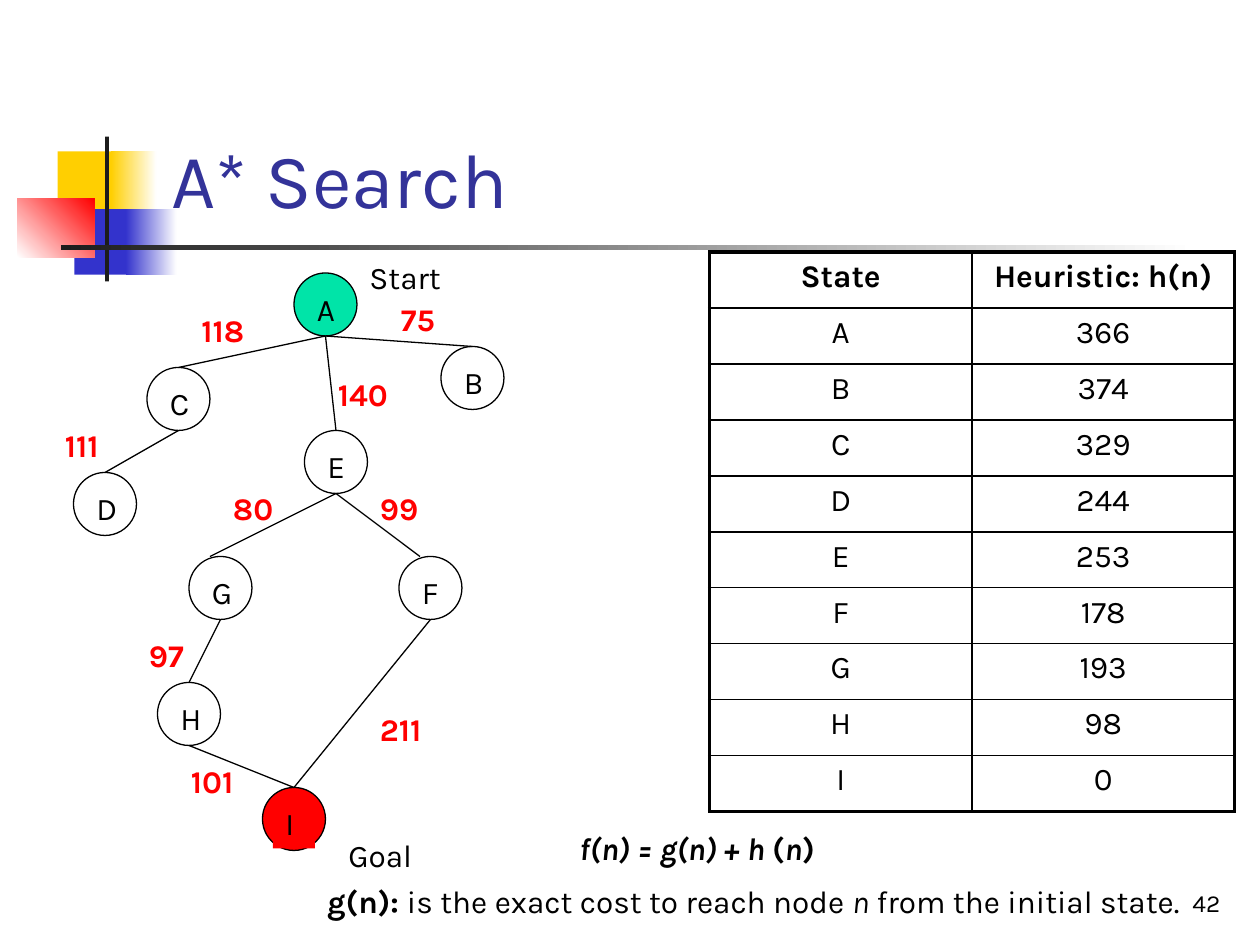
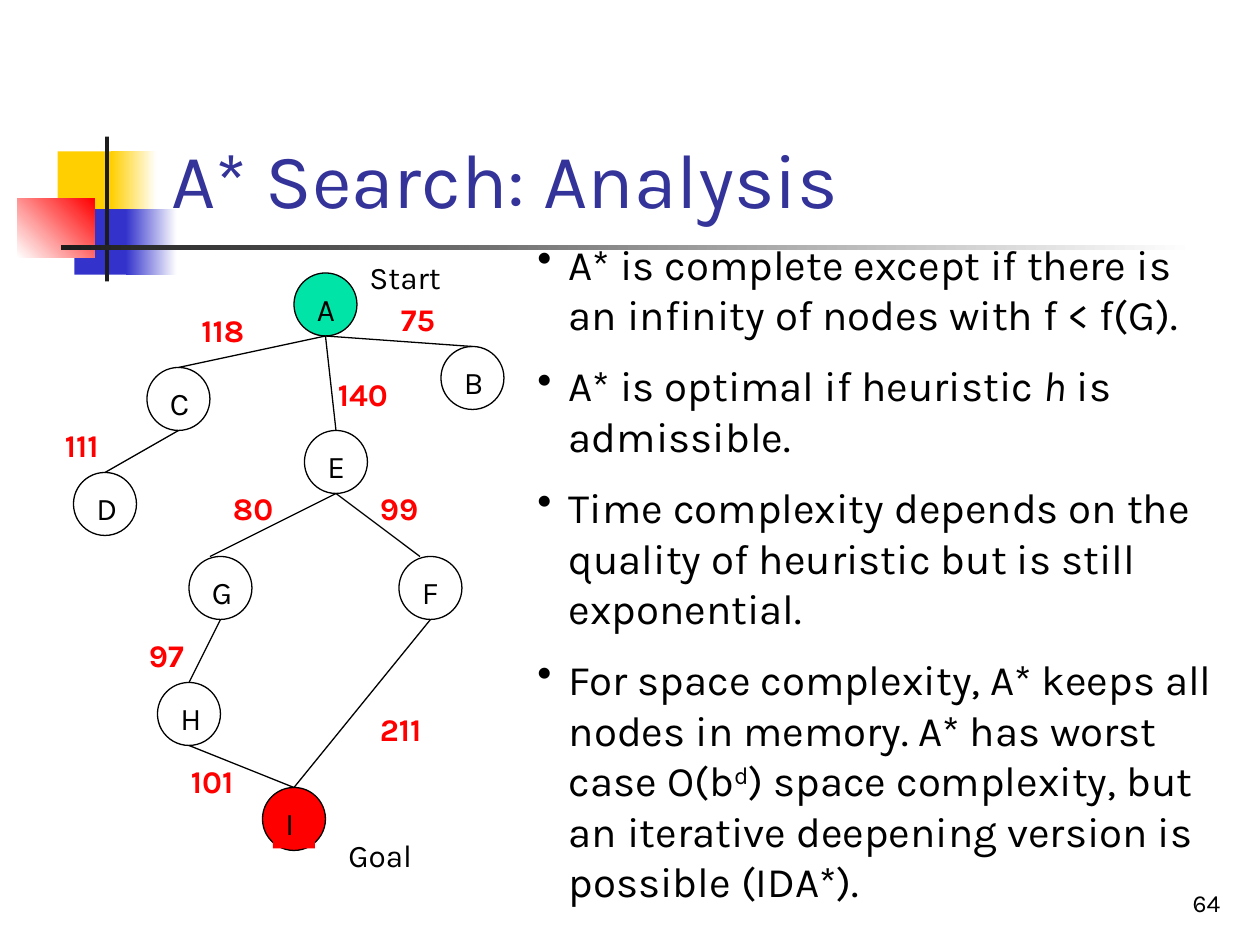
import pptx
import pptx.util
import pptx.dml.color
import pptx.enum.shapes
import pptx.enum.text
import pptx.oxml.ns
from lxml import etree

Pt = pptx.util.Pt
RGB = pptx.dml.color.RGBColor
SHAPE = pptx.enum.shapes.MSO_SHAPE
ALIGN = pptx.enum.text.PP_ALIGN
ANCHOR = pptx.enum.text.MSO_ANCHOR
qn = pptx.oxml.ns.qn

BLACK = RGB(0x00, 0x00, 0x00)
WHITE = RGB(0xFF, 0xFF, 0xFF)
RED = RGB(0xFF, 0x00, 0x00)
GREEN = RGB(0x00, 0xE4, 0xA8)
GOLD = RGB(0xFF, 0xCF, 0x01)
BLUE = RGB(0x33, 0x33, 0xCC)
NAVY = RGB(0x33, 0x33, 0x99)
INK = RGB(0x1C, 0x1C, 0x1C)

BODY = {"name": "Karla", "size": Pt(18), "bold": False, "color": BLACK}
COST = {**BODY, "bold": True, "color": RED}
HEAD = {**BODY, "size": Pt(44), "color": NAVY}
FOOT = {**BODY, "size": Pt(14)}
POINT = {**BODY, "size": Pt(24)}
BOLD = {"bold": True}
SLANT = {"italic": True}

# Left, top, width, height, colours (two make a gradient), angle
DECOR = [
    (33, 86.5, 34.5, 37.5, [GOLD], 0),
    (63.5, 86.5, 26, 37.5, [GOLD, WHITE], 0),
    (42.5, 119.5, 33, 37.5, [BLUE], 0),
    (72, 119.5, 29, 37.5, [BLUE, WHITE], 0),
    (10, 113.5, 44, 33.5, [WHITE, RED], 45),
    (60, 78, 2.3, 82.8, [INK], 0),
    (34.8, 140.2, 648, 2.5, [INK, WHITE], 0),
]

SIZE = 36
NODES = {
    "A": (168, 156), "B": (252, 198), "C": (84, 210),
    "D": (42, 270), "E": (174, 246), "F": (228, 318),
    "G": (108, 318), "H": (90, 390), "I": (150, 450),
}
DISCS = {"A": GREEN, "I": RED}
# Parent, child, cost, and the left and top of the cost
EDGES = [
    ("A", "B", 75, 222, 168), ("A", "C", 118, 108, 174),
    ("A", "E", 140, 186, 211), ("C", "D", 111, 30, 240),
    ("E", "F", 99, 210, 276), ("E", "G", 80, 126, 276),
    ("G", "H", 97, 78, 360), ("H", "I", 101, 102, 432),
    ("F", "I", 211, 210, 402),
]
SHIFT = {"F": -6, "G": -6}

ROWS = [("State", "Heuristic: h(n)"), ("A", "366"), ("B", "374"),
        ("C", "329"), ("D", "244"), ("E", "253"), ("F", "178"),
        ("G", "193"), ("H", "98"), ("I", "0")]

TERMS = [
    [("f(n) = g(n) + h ", {**BOLD, **SLANT}), ("(", BOLD),
     ("n", {**BOLD, **SLANT}), (")", BOLD)],
    [("g(n): ", BOLD), ("is the exact cost to reach node ", {}),
     ("n", SLANT), (" from the initial state.", {})],
]
FACTS = [
    [("A* is complete except if there is an infinity of nodes "
      "with f < f(G).", {})],
    [("A* is optimal if heuristic ", {}), ("h", SLANT),
     (" is admissible.", {})],
    [("Time complexity depends on the quality of heuristic but is "
      "still exponential.", {})],
    [("For space complexity, A* keeps all nodes in memory. A* has worst "
      "case O(b", {}), ("d", {"raise": 30000}),
     (") space complexity, but an iterative deepening version is "
      "possible (IDA*).", {})],
]


def style(run, look):
    for key, value in look.items():
        if key == "color":
            run.font.color.rgb = value
        elif key == "raise":
            run.font._element.set("baseline", str(value))
        else:
            setattr(run.font, key, value)


def write(frame, paras, look, align=ALIGN.LEFT):
    """Fill a text frame with paragraphs, each a list of (text, look)."""
    frame.word_wrap = True
    for i, runs in enumerate(paras):
        para = frame.add_paragraph() if i else frame.paragraphs[0]
        para.alignment = align
        para.space_before = look["size"] // 2 if i else Pt(0)
        for text, extra in runs:
            run = para.add_run()
            run.text = text
            style(run, {**look, **extra})


def add_text(slide, box, paras, look, align=ALIGN.LEFT, anchor=ANCHOR.TOP):
    if isinstance(paras, str):
        paras = [[(paras, {})]]
    frame = slide.shapes.add_textbox(*map(Pt, box)).text_frame
    frame.vertical_anchor = anchor
    write(frame, paras, look, align)
    return frame


def indent(para, left, first):
    props = para._p.get_or_add_pPr()
    props.set("marL", str(Pt(left)))
    props.set("indent", str(Pt(first)))
    return props


def add_form(slide, kind, box, colors=(), angle=0, line=None):
    form = slide.shapes.add_shape(kind, *map(Pt, box))
    form.shadow.inherit = False
    if len(colors) > 1:
        form.fill.gradient()
        form.fill.gradient_angle = angle
        for stop, color in zip(form.fill.gradient_stops, colors):
            stop.color.rgb = color
    elif colors:
        form.fill.solid()
        form.fill.fore_color.rgb = colors[0]
    else:
        form.fill.background()
    if line:
        form.line.color.rgb = line
        form.line.width = Pt(0.75)
    else:
        form.line.fill.background()


def add_line(slide, start, end):
    link = slide.shapes.add_connector(
        pptx.enum.shapes.MSO_CONNECTOR.STRAIGHT,
        *map(Pt, (*start, *end)))
    link.line.color.rgb = BLACK
    link.line.width = Pt(0.75)
    etree.SubElement(link._element.spPr, qn("a:effectLst"))


def add_node(slide, name):
    x, y = NODES[name]
    colors = [DISCS[name]] if name in DISCS else []
    add_form(slide, SHAPE.OVAL, (x, y, SIZE, SIZE), colors, line=BLACK)
    box = (x + 6, y + 6, 24, 28.8)
    if name == "I":
        add_form(slide, SHAPE.RECTANGLE, box, colors)
    add_text(slide, box, name, BODY)


def add_edge(slide, start, end, cost, x, y):
    """Join the foot of one node to the top of the next, with its cost."""
    (x1, y1), (x2, y2) = NODES[start], NODES[end]
    half = SIZE / 2
    add_line(slide, (x1 + half, y1 + SIZE),
             (x2 + half + SHIFT.get(end, 0), y2))
    label = str(cost)
    add_text(slide, (x, y, 24 + 12 * len(label), 28.8), label, COST)


def add_tree(slide):
    for name in NODES:
        add_node(slide, name)
    for edge in EDGES:
        add_edge(slide, *edge)
    add_text(slide, (204, 144, 96, 28.8), "Start", BODY)
    add_text(slide, (192, 474, 96, 28.8), "Goal", BODY)


def add_edges(cell, widths):
    """Draw the left, right, top and bottom borders of a cell."""
    props = cell._tc.get_or_add_tcPr()
    for i, (side, width) in enumerate(widths.items()):
        line = etree.Element(qn("a:ln" + side), w=str(Pt(width)))
        fill = etree.SubElement(line, qn("a:solidFill"))
        etree.SubElement(fill, qn("a:srgbClr"), val=str(BLACK))
        props.insert(i, line)


def add_grid(slide):
    last = len(ROWS) - 1
    table = slide.shapes.add_table(
        len(ROWS), 2, *map(Pt, (405.4, 144, 300, 320))).table
    for r, row in enumerate(ROWS):
        table.rows[r].height = Pt(32)
        for c, text in enumerate(row):
            cell = table.cell(r, c)
            cell.fill.background()
            write(cell.text_frame, [[(text, {"bold": r == 0})]],
                  BODY, ALIGN.CENTER)
            outer = {"L": c == 0, "R": c == 1, "T": r == 0, "B": r == last}
            add_edges(cell, {side: 2.25 if out else 1
                             for side, out in outer.items()})


def add_page(deck, title, number):
    slide = deck.slides.add_slide(deck.slide_layouts[5])
    for box in DECOR:
        add_form(slide, SHAPE.RECTANGLE, box[:4], *box[4:])
    head = slide.shapes.title
    place = {"left": 90.7, "top": 16.5, "width": 613.5, "height": 115.2}
    for key, value in place.items():
        setattr(head, key, Pt(value))
    head.text_frame.vertical_anchor = ANCHOR.BOTTOM
    write(head.text_frame, [[(title, {})]], HEAD)
    add_text(slide, (554.4, 492, 150, 36), str(number), FOOT,
             ALIGN.RIGHT, ANCHOR.BOTTOM)
    add_tree(slide)
    return slide


def add_facts(slide):
    frame = add_text(slide, (300, 132.5, 402, 395), FACTS, POINT)
    for para in frame.paragraphs:
        props = indent(para, 18, -18)
        etree.SubElement(props, qn("a:buChar"), char="•")


def main():
    deck = pptx.Presentation()
    deck.slide_width, deck.slide_height = Pt(720), Pt(540)

    search = add_page(deck, "A* Search", 42)
    add_grid(search)
    terms = add_text(search, (180, 470, 522, 66), TERMS, BODY)
    indent(terms.paragraphs[0], 144, 0)

    study = add_page(deck, "A* Search: Analysis", 64)
    add_facts(study)

    deck.save("out.pptx")


if __name__ == "__main__":
    main()
